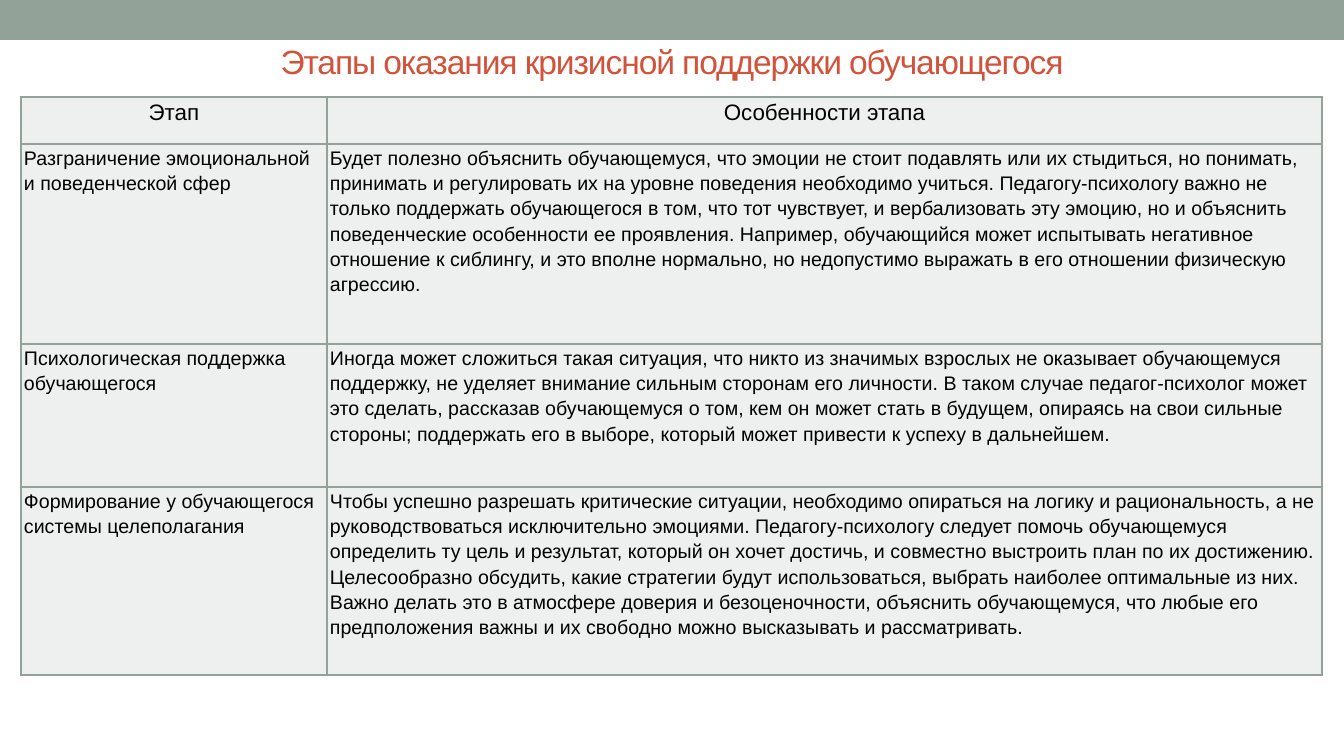
import pptx
import pptx.util
import pptx.dml.color
import pptx.enum.shapes
import pptx.enum.text
import pptx.oxml.ns
import lxml.etree

SCALE = 914400 / 100.8  # EMU in one px
COLORS = {"band": "93A299", "title": "D2533C", "text": "000000", "cell": "EEF0EF"}
ALIGN = pptx.enum.text.PP_ALIGN

HEADINGS = ("Этап", "Особенности этапа")
STAGES = [
    ("Разграничение эмоциональной и поведенческой сфер",
     "Будет полезно объяснить обучающемуся, что эмоции не стоит подавлять или их стыдиться, "
     "но понимать, принимать и регулировать их на уровне поведения необходимо учиться. "
     "Педагогу-психологу важно не только поддержать обучающегося в том, что тот чувствует, "
     "и вербализовать эту эмоцию, но и объяснить поведенческие особенности ее проявления. "
     "Например, обучающийся может испытывать негативное отношение к сиблингу, и это вполне "
     "нормально, но недопустимо выражать в его отношении физическую агрессию."),
    ("Психологическая поддержка обучающегося",
     "Иногда может сложиться такая ситуация, что никто из значимых взрослых не оказывает "
     "обучающемуся поддержку, не уделяет внимание сильным сторонам его личности. В таком "
     "случае педагог-психолог может это сделать, рассказав обучающемуся о том, кем он может "
     "стать в будущем, опираясь на свои сильные стороны; поддержать его в выборе, который "
     "может привести к успеху в дальнейшем."),
    ("Формирование у обучающегося системы целеполагания",
     "Чтобы успешно разрешать критические ситуации, необходимо опираться на логику и "
     "рациональность, а не руководствоваться исключительно эмоциями. Педагогу-психологу "
     "следует помочь обучающемуся определить ту цель и результат, который он хочет достичь, "
     "и совместно выстроить план по их достижению. Целесообразно обсудить, какие стратегии "
     "будут использоваться, выбрать наиболее оптимальные из них. Важно делать это в атмосфере "
     "доверия и безоценочности, объяснить обучающемуся, что любые его предположения важны и "
     "их свободно можно высказывать и рассматривать."),
]


def px(length):
    return pptx.util.Emu(round(length * SCALE))


def color(name):
    return pptx.dml.color.RGBColor.from_string(COLORS[name])


def write(frame, text, size, ink="text", align=ALIGN.LEFT, line_spacing=1.0, tracking=0):
    frame.word_wrap = True
    para = frame.paragraphs[0]
    para.alignment = align
    para.line_spacing = line_spacing
    span = para.add_run()
    span.text = text
    span.font.name = "Arial"
    span.font.size = pptx.util.Pt(size)
    span.font.color.rgb = color(ink)
    if tracking:
        span.font._element.set("spc", str(tracking))


def add_band(page, left, top, width, height):
    band = page.shapes.add_shape(pptx.enum.shapes.MSO_SHAPE.RECTANGLE,
                                 px(left), px(top), px(width), px(height))
    band.shadow.inherit = False
    band.fill.solid()
    band.fill.fore_color.rgb = color("band")
    band.line.fill.background()


def add_title(page, left, top, width, height):
    box = page.shapes.add_textbox(px(left), px(top), px(width), px(height))
    box.text_frame.vertical_anchor = pptx.enum.text.MSO_ANCHOR.MIDDLE
    write(box.text_frame, "Этапы оказания кризисной поддержки обучающегося", 24,
          ink="title", align=ALIGN.CENTER, tracking=-80)


def add_borders(cell):
    qn = pptx.oxml.ns.qn
    properties = cell._tc.get_or_add_tcPr()
    for side in ("a:lnL", "a:lnR", "a:lnT", "a:lnB"):
        line = lxml.etree.SubElement(properties, qn(side), w=str(pptx.util.Pt(1)))
        fill = lxml.etree.SubElement(line, qn("a:solidFill"))
        lxml.etree.SubElement(fill, qn("a:srgbClr"), val=COLORS["band"])


def add_stage_table(page, left, top, column_widths, row_heights):
    rows = [HEADINGS] + STAGES
    table = page.shapes.add_table(len(rows), len(HEADINGS), px(left), px(top),
                                  px(sum(column_widths)), px(sum(row_heights))).table
    for column, width in zip(table.columns, column_widths):
        column.width = px(width)
    for row, height in zip(table.rows, row_heights):
        row.height = px(height)
    for r, texts in enumerate(rows):
        for c, text in enumerate(texts):
            cell = table.cell(r, c)
            cell.margin_left = cell.margin_right = px(3)
            cell.margin_top = cell.margin_bottom = 0
            add_borders(cell)
            cell.fill.solid()
            cell.fill.fore_color.rgb = color("cell")
            write(cell.text_frame, text, 14 if r else 16, line_spacing=1.15,
                  align=ALIGN.LEFT if r else ALIGN.CENTER)


def main():
    deck = pptx.Presentation()
    deck.slide_width, deck.slide_height = px(1344), px(756)
    page = deck.slides.add_slide(deck.slide_layouts[6])
    add_band(page, 0, 0, 1344, 40)
    add_title(page, 204, 46, 936, 30)
    add_stage_table(page, 21, 97, (306, 995), (47, 200, 143, 188))
    deck.save("out.pptx")


if __name__ == "__main__":
    main()
